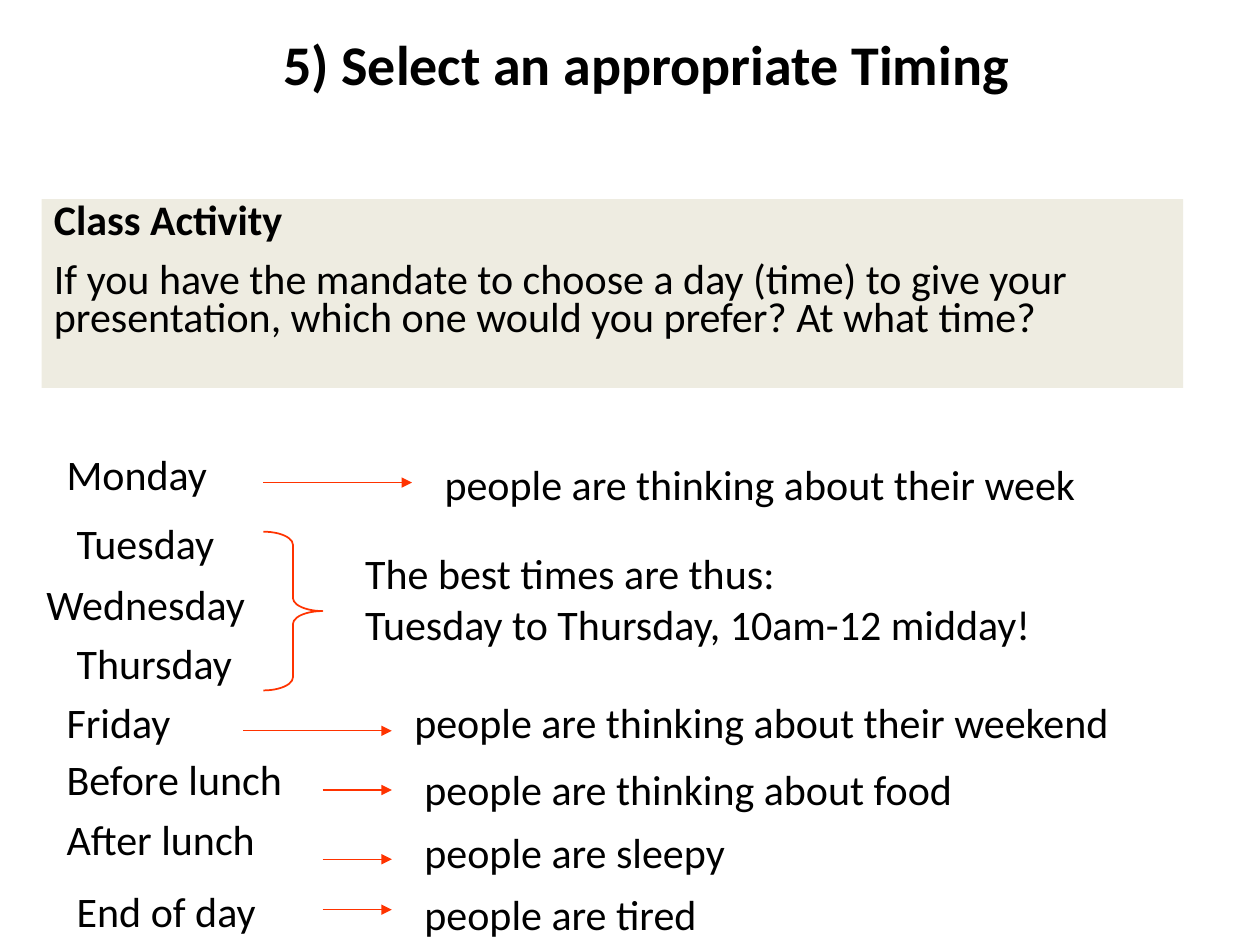
from pptx import Presentation
from pptx.dml.color import RGBColor
from pptx.enum.shapes import MSO_CONNECTOR, MSO_SHAPE
from pptx.enum.text import MSO_ANCHOR, MSO_AUTO_SIZE, PP_ALIGN
from pptx.oxml.ns import qn
from pptx.util import Inches, Pt
from lxml import etree

STRAIGHT = MSO_CONNECTOR.STRAIGHT
RECT, BRACE = MSO_SHAPE.RECTANGLE, MSO_SHAPE.RIGHT_BRACE
TOP, NO_FIT = MSO_ANCHOR.TOP, MSO_AUTO_SIZE.NONE
LEFT, CENTER = PP_ALIGN.LEFT, PP_ALIGN.CENTER

FONT = "Calibri"
COLORS = {"text": "000000", "panel": "EEECE1", "accent": "FF3300"}
LINE_H = 0.5

# Content
TITLE = "5) Select an appropriate Timing"
ACTIVITY = [
    ("Class Activity", True),
    ("If you have the mandate to choose a day (time) to give your "
     "presentation, which one would you prefer? At what time?", False),
]
BEST_TIMES = ["The best times are thus:", "Tuesday to Thursday, 10am-12 midday!"]

# Times of the week: text, left, top, width
TIMES = [
    ("Monday", 0.43, 3.51, 1.5),
    ("Tuesday", 0.51, 4.06, 1.43),
    ("Wednesday", 0.27, 4.54, 1.9),
    ("Thursday", 0.51, 5.01, 1.74),
    ("Friday", 0.43, 5.48, 1.57),
    ("Before lunch", 0.43, 5.93, 2.05),
    ("After lunch", 0.43, 6.41, 1.81),
    ("End of day", 0.51, 6.98, 1.78),
]
# What the audience is like: text, left, top, width
MOODS = [
    ("people are thinking about their week", 3.43, 3.59, 5.61),
    ("people are thinking about their weekend", 3.19, 5.48, 6.16),
    ("people are thinking about food", 3.27, 6.01, 4.72),
    ("people are sleepy", 3.27, 6.51, 2.78),
    ("people are tired", 3.27, 7.0, 2.52),
]
# Arrows from time to mood: start, end, height on the slide
ARROWS = [
    (2.09, 3.27, 3.83),
    (1.93, 3.11, 5.8),
    (2.56, 3.11, 6.27),
    (2.56, 3.11, 6.82),
    (2.56, 3.11, 7.22),
]


def color(name):
    return RGBColor.from_string(COLORS[name])


def box(*values):
    return [Inches(v) for v in values]


def write(tf, paragraphs, size=24, align=LEFT, spacing=None, before=0):
    """Fill a text frame with (text, bold) paragraphs."""
    tf.word_wrap = True
    tf.auto_size = NO_FIT
    tf.vertical_anchor = TOP
    for i, (text, bold) in enumerate(paragraphs):
        p = tf.add_paragraph() if i else tf.paragraphs[0]
        p.alignment = align
        p.line_spacing = spacing
        p.space_before = Pt(before if i else 0)
        r = p.add_run()
        r.text = text
        r.font.name, r.font.size, r.font.bold = FONT, Pt(size), bold
        r.font.color.rgb = color("text")


def add_text(s, lines, left, top, width, height=LINE_H):
    sp = s.shapes.add_textbox(*box(left, top, width, height))
    write(sp.text_frame, [(line, False) for line in lines])


def add_arrow(s, start, end, y):
    line = s.shapes.add_connector(STRAIGHT, *box(start, y, end, y))
    line.line.color.rgb = color("accent")
    line.line.width = Pt(0.75)
    ln = line.line._get_or_add_ln()
    etree.SubElement(ln, qn("a:tailEnd"), type="triangle")
    etree.SubElement(line._element.spPr, qn("a:effectLst"))


def main():
    prs = Presentation()
    prs.slide_width, prs.slide_height = box(10, 7.5)
    s = prs.slides.add_slide(prs.slide_layouts[5])

    # Title
    title = s.shapes.title
    title.left, title.top, title.width, title.height = box(0.43, 0.25, 9.4, 0.57)
    write(title.text_frame, [(TITLE, True)], size=32, align=CENTER, spacing=0.88)

    # Class activity panel
    panel = s.shapes.add_shape(RECT, *box(0.33, 1.58, 9.06, 1.5))
    panel.shadow.inherit = False
    panel.fill.solid()
    panel.fill.fore_color.rgb = color("panel")
    panel.line.fill.background()
    write(panel.text_frame, ACTIVITY, spacing=0.75, before=12)

    # Times, moods and the arrows between them
    for text, left, top, width in TIMES + MOODS:
        add_text(s, [text], left, top, width)
    for arrow in ARROWS:
        add_arrow(s, *arrow)

    # Brace over the best days
    brace = s.shapes.add_shape(BRACE, *box(2.09, 4.22, 0.47, 1.26))
    brace.shadow.inherit = False
    brace.adjustments[0] = 0.22
    brace.fill.background()
    brace.line.color.rgb = color("accent")
    brace.line.width = Pt(1)
    add_text(s, BEST_TIMES, 2.8, 4.3, 6.14, 0.9)

    prs.save("out.pptx")


if __name__ == "__main__":
    main()
